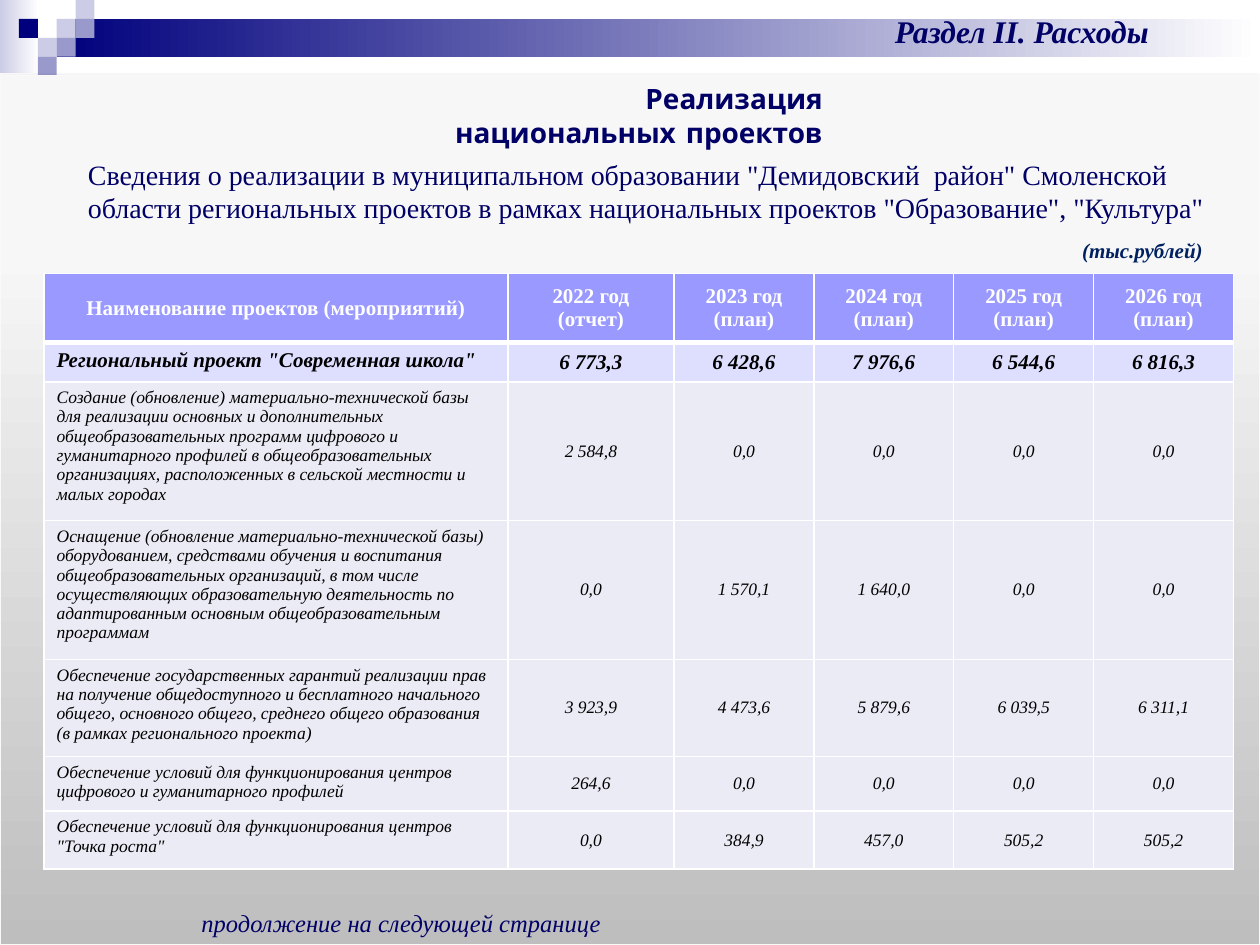
from pptx import Presentation
from pptx.dml.color import RGBColor
from pptx.enum.shapes import MSO_SHAPE
from pptx.enum.text import MSO_ANCHOR, PP_ALIGN
from pptx.oxml import parse_xml
from pptx.oxml.ns import nsdecls, qn
from pptx.util import Inches, Pt

RECT, PANEL = MSO_SHAPE.RECTANGLE, MSO_SHAPE.FLOWCHART_PROCESS
LEFT, MID, RIGHT = PP_ALIGN.LEFT, PP_ALIGN.CENTER, PP_ALIGN.RIGHT
TOP, CENTER = MSO_ANCHOR.TOP, MSO_ANCHOR.MIDDLE

NAVY = RGBColor(0x00, 0x00, 0x7D)
PALE = RGBColor(0xCC, 0xCC, 0xE6)
LILAC = RGBColor(0x99, 0x99, 0xCC)
WHITE = RGBColor(0xFF, 0xFF, 0xFF)
BLACK = RGBColor(0x00, 0x00, 0x00)
INK = RGBColor(0x00, 0x00, 0x66)
UNIT = RGBColor(0x00, 0x20, 0x60)
GREY = RGBColor(0xBE, 0xBE, 0xBE)
LIGHT = RGBColor(0xF7, 0xF7, 0xF7)
MIST = RGBColor(0xF8, 0xF8, 0xF8)
EDGE = RGBColor(0xF9, 0xF9, 0xF9)
HEAD = RGBColor(0x99, 0x99, 0xFF)
TOTAL = RGBColor(0xDE, 0xDE, 0xFF)
BODY = RGBColor(0xEB, 0xEB, 0xF5)

SERIF = "Times New Roman"
COLS = [3.68, 1.32] + [1.11] * 4
HEIGHTS = [0.55, 0.31, 1.1, 1.1, 0.77, 0.43, 0.46]
ROWS = [
    ["Наименование проектов (мероприятий)", "2022 год\n(отчет)", "2023 год\n(план)",
     "2024 год\n(план)", "2025 год\n(план)", "2026 год (план)"],
    ['Региональный проект "Современная школа"',
     "6 773,3", "6 428,6", "7 976,6", "6 544,6", "6 816,3"],
    ["Создание (обновление) материально-технической базы для реализации основных и "
     "дополнительных общеобразовательных программ цифрового и гуманитарного профилей "
     "в общеобразовательных организациях, расположенных в сельской местности и малых "
     "городах", "2 584,8", "0,0", "0,0", "0,0", "0,0"],
    ["Оснащение (обновление материально-технической базы) оборудованием, средствами "
     "обучения и воспитания общеобразовательных организаций, в том числе "
     "осуществляющих образовательную деятельность по адаптированным основным "
     "общеобразовательным программам", "0,0", "1 570,1", "1 640,0", "0,0", "0,0"],
    ["Обеспечение государственных гарантий реализации прав на получение общедоступного "
     "и бесплатного начального общего, основного общего, среднего общего образования "
     "(в рамках регионального проекта)",
     "3 923,9", "4 473,6", "5 879,6", "6 039,5", "6 311,1"],
    ["Обеспечение условий для функционирования центров цифрового и гуманитарного "
     "профилей", "264,6", "0,0", "0,0", "0,0", "0,0"],
    ['Обеспечение условий для функционирования центров "Точка роста"',
     "0,0", "384,9", "457,0", "505,2", "505,2"],
]


def style(font, color, **form):
    font.color.rgb = color
    for key, value in form.items():
        setattr(font, key, value)


def add_block(slide, box, stops, kind=RECT, angle=0):
    """One stop gives a solid fill, more give a gradient."""
    shape = slide.shapes.add_shape(kind, *map(Inches, box))
    shape.shadow.inherit = False
    shape.line.fill.background()
    if len(stops) == 1:
        shape.fill.solid()
        shape.fill.fore_color.rgb = stops[0][1]
        return shape
    shape.fill.gradient()
    shape.fill.gradient_angle = angle
    items = shape.element.spPr.find(qn("a:gradFill")).find(qn("a:gsLst"))
    for old in list(items):
        items.remove(old)
    for place, color in stops:
        items.append(parse_xml(
            f'<a:gs {nsdecls("a")} pos="{place * 1000}">'
            f'<a:srgbClr val="{color}"/></a:gs>'))
    return shape


def add_text(slide, box, text, color, align=LEFT, **form):
    frame = slide.shapes.add_textbox(*map(Inches, box)).text_frame
    frame.word_wrap = True
    para = frame.paragraphs[0]
    para.alignment = align
    run = para.add_run()
    run.text = text
    style(run.font, color, **form)


def add_banner(slide, x, y, unit):
    add_block(slide, (x, y, 0.31, 0.58), [(0, PALE), (100, WHITE)])
    add_block(slide, (x + 3 * unit, y + unit, 10 - 3 * unit, 2 * unit),
              [(0, NAVY), (100, WHITE)])
    # Squares on a grid: column, row, colour
    for col, row, color in [(3, 1, PALE), (4, 0, PALE), (4, 1, LILAC), (2, 2, PALE),
                            (1, 1, NAVY), (3, 2, LILAC), (2, 3, LILAC)]:
        add_block(slide, (x + col * unit, y + row * unit, unit, unit), [(0, color)])


def add_panel(slide, box):
    panel = add_block(slide, box, [(0, GREY), (80, LIGHT), (100, MIST)], PANEL, 90)
    panel.line.color.rgb = EDGE
    panel.line.width = Pt(0.75)
    panel.element.spPr.find(qn("a:effectLst")).append(parse_xml(
        f'<a:outerShdw {nsdecls("a")} blurRad="{Pt(3.1)}" dist="{Pt(1.8)}" '
        'dir="5400000" rotWithShape="0"><a:srgbClr val="000000">'
        '<a:alpha val="35000"/></a:srgbClr></a:outerShdw>'))


def add_edges(cell, base):
    props = cell._tc.get_or_add_tcPr()
    sides = [("lnL", 1), ("lnR", 1), ("lnT", 1), ("lnB", base)]
    for spot, (side, width) in enumerate(sides):
        props.insert(spot, parse_xml(
            f'<a:{side} {nsdecls("a")} w="{Pt(width)}"><a:solidFill>'
            f'<a:srgbClr val="{WHITE}"/></a:solidFill></a:{side}>'))


def add_grid(slide, x, y):
    table = slide.shapes.add_table(
        len(ROWS), len(COLS), Inches(x), Inches(y),
        Inches(sum(COLS)), Inches(sum(HEIGHTS))).table
    for col, width in zip(table.columns, COLS):
        col.width = Inches(width)
    for row, height in zip(table.rows, HEIGHTS):
        row.height = Inches(height)
    for r, line in enumerate(ROWS):
        fill = [HEAD, TOTAL][r] if r < 2 else BODY
        form = {"name": SERIF, "size": Pt(12 if r < 2 else 10),
                "bold": r < 2, "italic": r > 0}
        for c, text in enumerate(line):
            cell = table.cell(r, c)
            label = c == 0 and r > 0
            cell.text = text
            cell.vertical_anchor = TOP if label else CENTER
            cell.fill.solid()
            cell.fill.fore_color.rgb = fill
            add_edges(cell, 1 if r else 3)
            for para in cell.text_frame.paragraphs:
                para.alignment = LEFT if label else MID
                for run in para.runs:
                    style(run.font, BLACK if r else WHITE, **form)


def add_heads(slide, x, y):
    add_text(slide, (x + 6.26, y + 0.05, 3.7, 0.4), "Раздел II. Расходы", INK, MID,
             name=SERIF, size=Pt(18), bold=True, italic=True)
    add_text(slide, (x + 3.35, y + 0.6, 3.28, 0.37), "Реализация национальных проектов",
             INK, RIGHT, name="Comic Neue", size=Pt(16), bold=True)
    add_text(slide, (x + 0.6, y + 1.2, 9.36, 0.64),
             'Сведения о реализации в муниципальном образовании "Демидовский  район" '
             'Смоленской области региональных проектов в рамках национальных проектов '
             '"Образование", "Культура"', INK, name=SERIF, size=Pt(16))


def add_notes(slide, x, y):
    add_text(slide, (x + 1.5, y + 7.16, 7.01, 0.34), "продолжение на следующей странице",
             INK, name=SERIF, size=Pt(14), italic=True)
    add_text(slide, (x + 8.49, y + 1.84, 1.17, 0.3), "(тыс.рублей)", UNIT,
             name=SERIF, size=Pt(12), bold=True, italic=True)


def main():
    deck = Presentation()
    deck.slide_width, deck.slide_height = Inches(10), Inches(7.5)
    slide = deck.slides.add_slide(deck.slide_layouts[6])
    # Backdrop
    add_banner(slide, 0, 0, 0.15)
    add_panel(slide, (0, 0.6, 10, 6.9))
    # Content
    add_heads(slide, 0, 0)
    add_grid(slide, 0.35, 2.17)
    add_notes(slide, 0, 0)
    deck.save("out.pptx")


if __name__ == "__main__":
    main()
